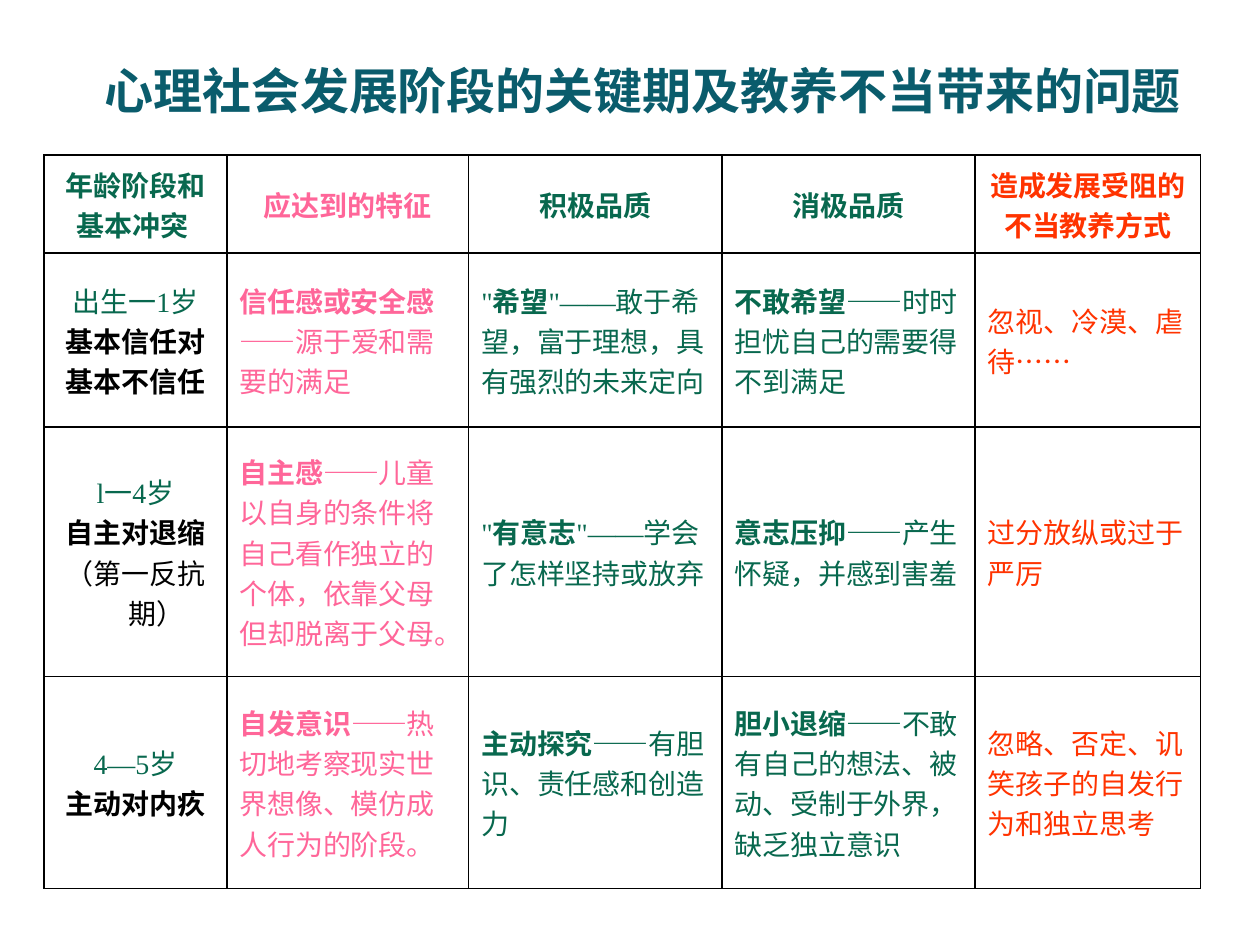
from lxml.etree import SubElement
from pptx import Presentation
from pptx.dml.color import RGBColor
from pptx.enum.text import MSO_ANCHOR, PP_ALIGN
from pptx.oxml.ns import qn
from pptx.util import Inches, Pt

GREEN, PINK, RED, BLACK, TEAL = "08684E", "FF6699", "FF3300", "000000", "0A5C6C"


def rgb(value):
    return RGBColor.from_string(value)


def write(paragraph, text, color=BLACK, size=16, font="Times New Roman",
          align=PP_ALIGN.LEFT, hanging=False):
    paragraph.alignment = align
    if hanging:
        properties = paragraph._p.get_or_add_pPr()
        properties.set("marL", str(Inches(0.38)))
        properties.set("indent", str(Inches(-0.38)))
    for position, part in enumerate(text.split("|")):
        if part:
            run = paragraph.add_run()
            run.text = part
            run.font.size = Pt(size)
            run.font.name = font
            run.font.bold = position % 2 == 1
            run.font.color.rgb = rgb(color)


prs = Presentation()
prs.slide_width, prs.slide_height = Inches(10), Inches(7.5)
slide = prs.slides.add_slide(prs.slide_layouts[6])

title = slide.shapes.add_textbox(Inches(0.59), Inches(0.29), Inches(9.02), Inches(0.71)).text_frame
title.word_wrap = True
title.vertical_anchor = MSO_ANCHOR.BOTTOM
write(title.paragraphs[0], "|心理社会发展阶段的关键期及教养不当带来的问题", color=TEAL,
      size=28, font="TeX Gyre Adventor", align=PP_ALIGN.CENTER)

stages = [
    ["|年龄阶段和基本冲突 ", "|应达到的特征", "|积极品质", "|消极品质", "|造成发展受阻的不当教养方式"],
    ["出生一1岁\n|基本信任对基本不信任",
     "|信任感或安全感|——源于爱和需要的满足",
     '"|希望|"——敢于希望，富于理想，具有强烈的未来定向',
     "|不敢希望|——时时担忧自己的需要得不到满足",
     "忽视、冷漠、虐待……"],
    ["l一4岁\n|自主对退缩\n（第一反抗期） ",
     "|自主感|——儿童以自身的条件将自己看作独立的个体，依靠父母但却脱离于父母。",
     '"|有意志|"——学会了怎样坚持或放弃',
     "|意志压抑|——产生怀疑，并感到害羞",
     "过分放纵或过于严厉"],
    ["4—5岁\n|主动对内疚",
     "|自发意识|——热切地考察现实世界想像、模仿成人行为的阶段。",
     "|主动探究|——有胆识、责任感和创造力",
     "|胆小退缩|——不敢有自己的想法、被动、受制于外界，缺乏独立意识",
     "忽略、否定、讥笑孩子的自发行为和独立思考"],
]
column_colors = [GREEN, PINK, GREEN, GREEN, RED]
column_widths = [1.45, 1.92, 2.01, 2.01, 1.79]
row_heights = [0.78, 1.38, 1.98, 1.68]

table = slide.shapes.add_table(4, 5, Inches(0.35), Inches(1.23), Inches(9.18), Inches(5.82)).table
table.first_row = table.horz_banding = False
for column, width in zip(table.columns, column_widths):
    column.width = Inches(width)
for row, height in zip(table.rows, row_heights):
    row.height = Inches(height)

for r, stage in enumerate(stages):
    for c, content in enumerate(stage):
        cell = table.cell(r, c)
        cell.vertical_anchor = MSO_ANCHOR.MIDDLE
        borders = cell._tc.get_or_add_tcPr()
        for side in ("a:lnL", "a:lnR", "a:lnT", "a:lnB"):
            border = SubElement(borders, qn(side), w=str(Pt(1)))
            SubElement(SubElement(border, qn("a:solidFill")), qn("a:srgbClr"), val=BLACK)
        cell.fill.background()
        centered = r == 0 or c == 0
        hanging = c in (1, 2, 3) if r == 0 else c == 0 and r > 1
        for line, text in enumerate(content.split("\n")):
            frame = cell.text_frame
            paragraph = frame.paragraphs[0] if line == 0 else frame.add_paragraph()
            write(paragraph, text,
                  color=BLACK if line else column_colors[c],
                  font="Noto Sans CJK SC" if r == 1 and line else "Times New Roman",
                  align=PP_ALIGN.CENTER if centered else PP_ALIGN.LEFT,
                  hanging=hanging)

prs.save("out.pptx")
